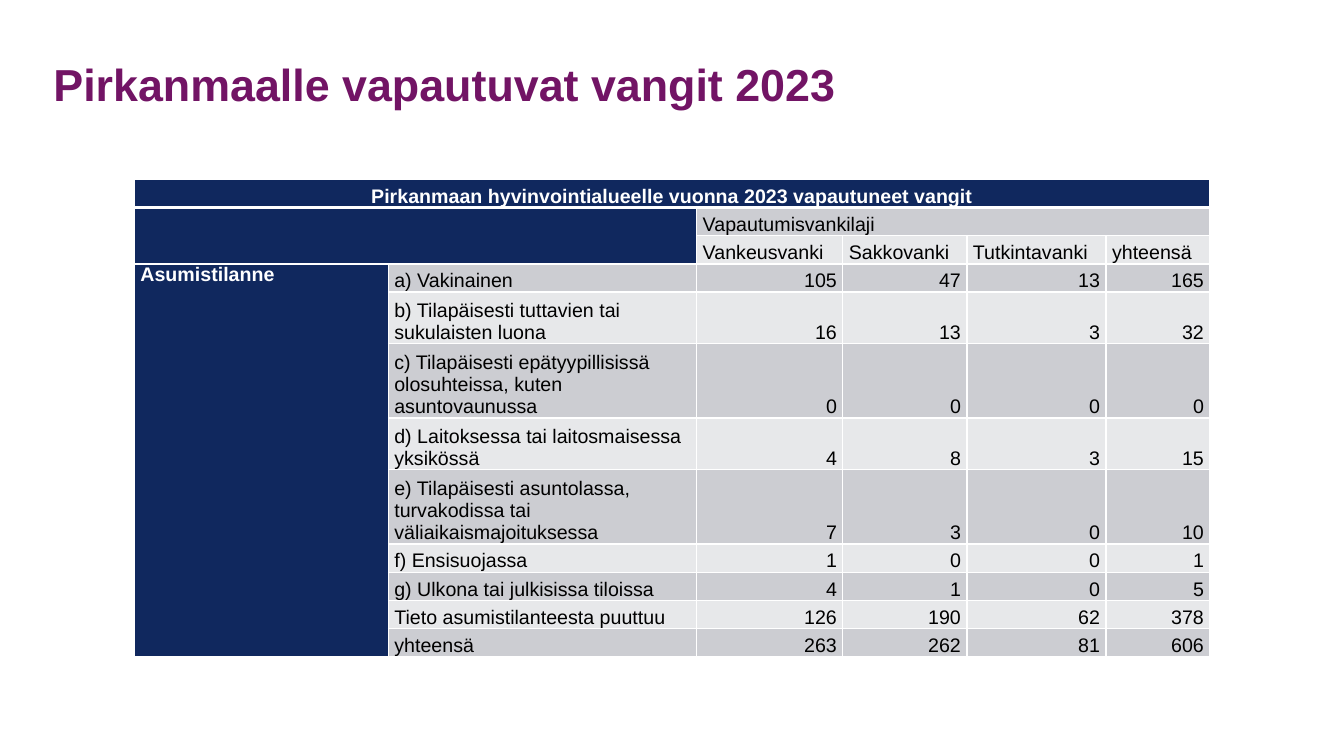
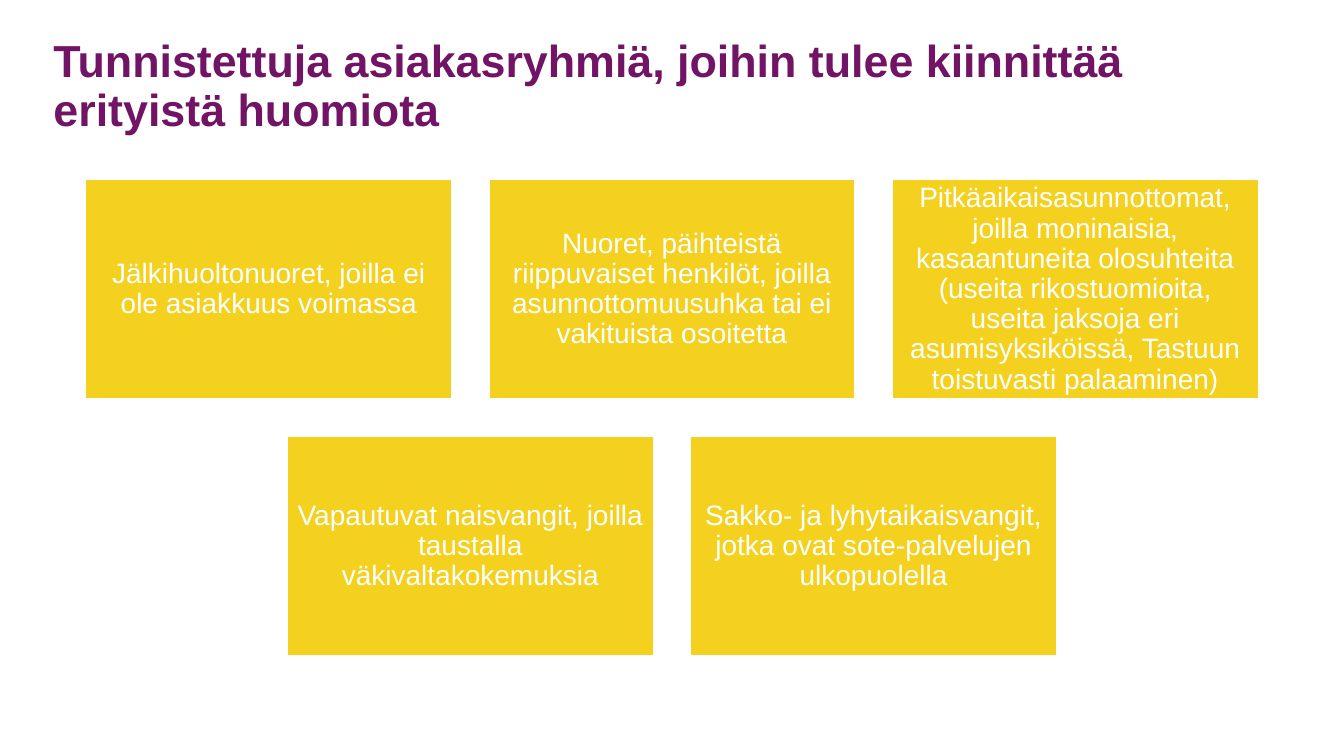
from lxml.etree import SubElement
from pptx import Presentation
from pptx.dml.color import RGBColor
from pptx.enum.shapes import MSO_SHAPE
from pptx.enum.text import MSO_ANCHOR, MSO_AUTO_SIZE, PP_ALIGN
from pptx.oxml.ns import qn
from pptx.util import Pt

PURPLE = RGBColor(0x72, 0x14, 0x65)
NAVY = RGBColor(0x10, 0x28, 0x5E)
YELLOW = RGBColor(0xF4, 0xD1, 0x1F)
BAND_DARK = RGBColor(0xCC, 0xCD, 0xD2)
BAND_LIGHT = RGBColor(0xE7, 0xE8, 0xEA)
WHITE = RGBColor(0xFF, 0xFF, 0xFF)
BLACK = RGBColor(0, 0, 0)
FONT = "Arial"

SLIDE_W, SLIDE_H = 960, 540
CONTENT_TOP = 128.2

COL_WIDTHS = [181.4, 220.3, 104.4, 88.6, 99.4, 74.2]
LINE_HEIGHTS = {1: 20.1, 2: 36.8, 3: 53.2}
ROW_LINES = [1, 1, 1, 1, 2, 3, 2, 3, 1, 1, 1, 1]
TABLE_TITLE = "Pirkanmaan hyvinvointialueelle vuonna 2023 vapautuneet vangit"
ROWS = [
    [TABLE_TITLE, "", "", "", "", ""],
    ["", "", "Vapautumisvankilaji", "", "", ""],
    ["", "", "Vankeusvanki", "Sakkovanki", "Tutkintavanki", "yhteensä"],
    ["Asumistilanne", "a) Vakinainen", 105, 47, 13, 165],
    ["", "b) Tilapäisesti tuttavien tai sukulaisten luona", 16, 13, 3, 32],
    ["", "c) Tilapäisesti epätyypillisissä olosuhteissa, kuten asuntovaunussa", 0, 0, 0, 0],
    ["", "d) Laitoksessa tai laitosmaisessa yksikössä", 4, 8, 3, 15],
    ["", "e) Tilapäisesti asuntolassa, turvakodissa tai väliaikaismajoituksessa", 7, 3, 0, 10],
    ["", "f) Ensisuojassa", 1, 0, 0, 1],
    ["", "g) Ulkona tai julkisissa tiloissa", 4, 1, 0, 5],
    ["", "Tieto asumistilanteesta puuttuu", 126, 190, 62, 378],
    ["", "yhteensä", 263, 262, 81, 606],
]
# First and last cell (row, column) of each merged area
MERGES = [((0, 0), (0, 5)), ((1, 0), (2, 1)), ((1, 2), (1, 5)), ((3, 0), (11, 0))]

BOX_W, BOX_H, BOX_GAP, BOX_ROW_GAP = 262, 157, 26, 26.6
GROUP_ROWS = [
    [
        "Jälkihuoltonuoret, joilla ei ole asiakkuus voimassa",
        "Nuoret, päihteistä riippuvaiset henkilöt, joilla asunnottomuusuhka "
        "tai ei vakituista osoitetta",
        "Pitkäaikaisasunnottomat, joilla moninaisia, kasaantuneita olosuhteita "
        "(useita rikostuomioita, useita jaksoja eri asumisyksiköissä, "
        "Tastuun toistuvasti palaaminen)",
    ],
    [
        "Vapautuvat naisvangit, joilla taustalla väkivaltakokemuksia",
        "Sakko- ja lyhytaikaisvangit, jotka ovat sote-palvelujen ulkopuolella",
    ],
]


def style_paragraph(p, size, color, bold=False, align=PP_ALIGN.LEFT, spacing=None):
    p.alignment = align
    p.line_spacing = spacing
    p.font.name = FONT
    p.font.size = Pt(size)
    p.font.bold = bold
    p.font.color.rgb = color


def set_margins(tf, margin):
    tf.margin_left = tf.margin_right = tf.margin_top = tf.margin_bottom = Pt(margin)


def add_titled_slide(prs, title):
    s = prs.slides.add_slide(prs.slide_layouts[5])
    sp = s.shapes.title
    sp.left, sp.top, sp.width, sp.height = Pt(38.2), Pt(26), Pt(884), Pt(72.7)
    tf = sp.text_frame
    tf.text = title
    tf.word_wrap = True
    tf.auto_size = MSO_AUTO_SIZE.NONE
    tf.vertical_anchor = MSO_ANCHOR.MIDDLE
    set_margins(tf, 0)
    style_paragraph(tf.paragraphs[0], 32, PURPLE, bold=True, spacing=0.9)
    return s


def set_borders(cell, bottom_width):
    """Give a cell white borders; call before setting its fill."""
    tc_pr = cell._tc.get_or_add_tcPr()
    for side, width in (("L", 1), ("R", 1), ("T", 1), ("B", bottom_width)):
        ln = SubElement(tc_pr, qn(f"a:ln{side}"), w=str(Pt(width)))
        fill = SubElement(ln, qn("a:solidFill"))
        SubElement(fill, qn("a:srgbClr"), val=str(WHITE))


def format_cell(cell, row, col, value):
    is_header = row == 0 or col == 0 or (row < 3 and col == 1)
    cell.text = str(value)
    cell.margin_left = cell.margin_right = Pt(4.3)
    cell.margin_top = cell.margin_bottom = 0
    starts_side_header = row == 3 and col == 0
    cell.vertical_anchor = MSO_ANCHOR.TOP if starts_side_header else MSO_ANCHOR.BOTTOM
    set_borders(cell, 3 if row == 0 else 1)
    cell.fill.solid()
    band = BAND_DARK if row % 2 else BAND_LIGHT
    cell.fill.fore_color.rgb = NAVY if is_header else band
    if row == 0:
        align = PP_ALIGN.CENTER
    else:
        align = PP_ALIGN.RIGHT if isinstance(value, int) else PP_ALIGN.LEFT
    style_paragraph(cell.text_frame.paragraphs[0], 14,
                    WHITE if is_header else BLACK, is_header, align)


def add_housing_table(s):
    heights = [LINE_HEIGHTS[n] for n in ROW_LINES]
    table = s.shapes.add_table(len(ROWS), len(COL_WIDTHS), Pt(96), Pt(CONTENT_TOP),
                               Pt(sum(COL_WIDTHS)), Pt(sum(heights))).table
    table.horz_banding = False
    for column, width in zip(table.columns, COL_WIDTHS):
        column.width = Pt(width)
    for row, height in zip(table.rows, heights):
        row.height = Pt(height)
    for i, values in enumerate(ROWS):
        for j, value in enumerate(values):
            format_cell(table.cell(i, j), i, j, value)
    for first, last in MERGES:
        table.cell(*first).merge(table.cell(*last))


def add_group_box(s, text, left, top):
    sp = s.shapes.add_shape(MSO_SHAPE.RECTANGLE, Pt(left), Pt(top), Pt(BOX_W), Pt(BOX_H))
    sp.shadow.inherit = False
    sp.fill.solid()
    sp.fill.fore_color.rgb = YELLOW
    sp.line.color.rgb = WHITE
    sp.line.width = Pt(1.35)
    tf = sp.text_frame
    tf.text = text
    tf.word_wrap = True
    tf.vertical_anchor = MSO_ANCHOR.MIDDLE
    set_margins(tf, 6)
    style_paragraph(tf.paragraphs[0], 20, WHITE, align=PP_ALIGN.CENTER, spacing=0.9)


def add_group_boxes(s):
    """Lay out the boxes in rows, each row centred on the slide."""
    for i, texts in enumerate(GROUP_ROWS):
        row_width = len(texts) * (BOX_W + BOX_GAP) - BOX_GAP
        left = (SLIDE_W - row_width) / 2
        top = CONTENT_TOP + i * (BOX_H + BOX_ROW_GAP)
        for j, text in enumerate(texts):
            add_group_box(s, text, left + j * (BOX_W + BOX_GAP), top)


def main():
    prs = Presentation()
    prs.slide_width, prs.slide_height = Pt(SLIDE_W), Pt(SLIDE_H)
    add_housing_table(add_titled_slide(prs, "Pirkanmaalle vapautuvat vangit 2023"))
    add_group_boxes(add_titled_slide(
        prs, "Tunnistettuja asiakasryhmiä, joihin tulee kiinnittää erityistä huomiota"))
    prs.save("out.pptx")


if __name__ == "__main__":
    main()
